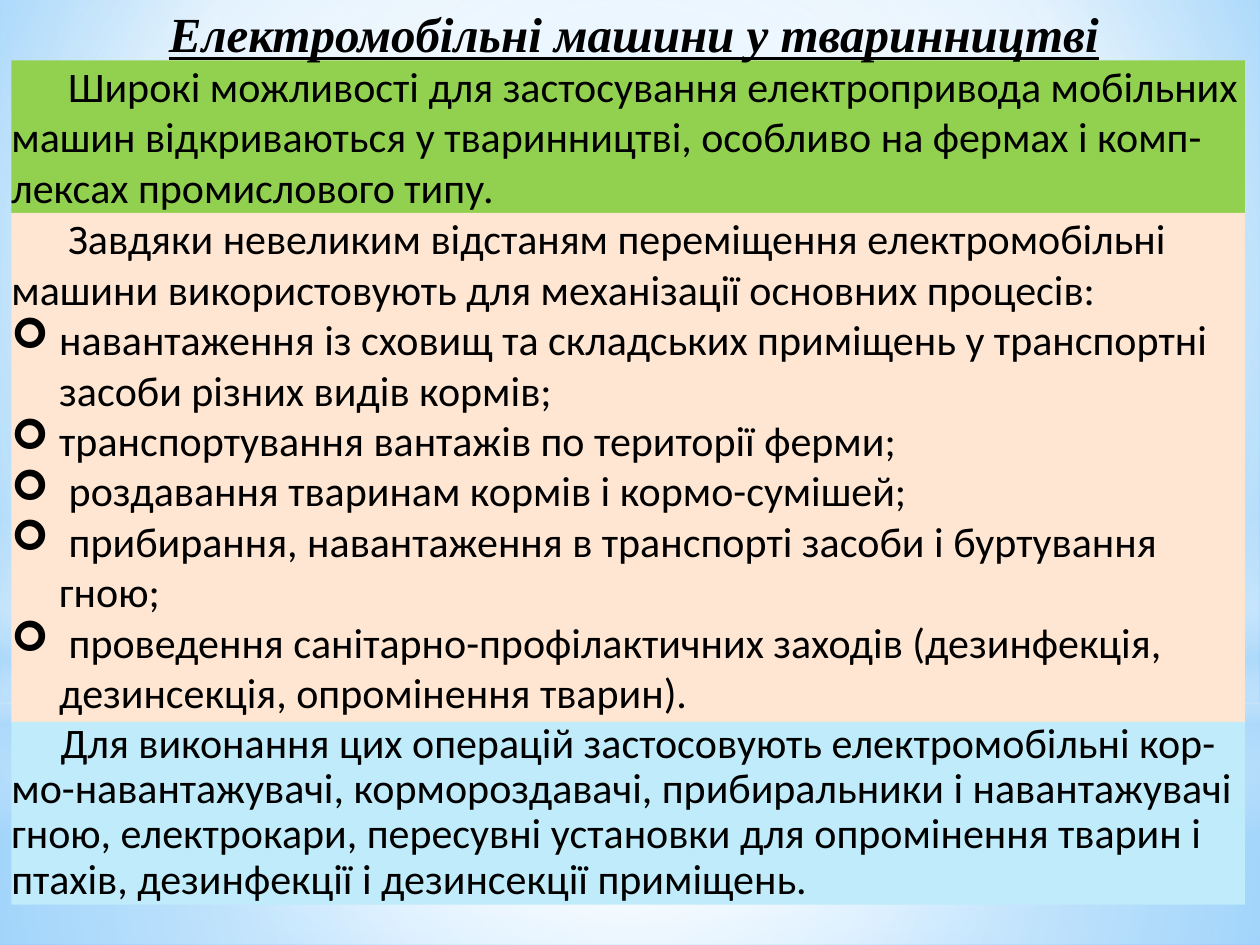
from lxml.etree import SubElement
from pptx import Presentation
from pptx.dml.color import RGBColor
from pptx.enum.shapes import MSO_SHAPE as Shape
from pptx.enum.text import MSO_ANCHOR as Anchor, MSO_AUTO_SIZE as AutoSize, PP_ALIGN as Align
from pptx.oxml.ns import qn
from pptx.util import Inches, Pt

BLACK = RGBColor(0x00, 0x00, 0x00)
WHITE = RGBColor(0xFF, 0xFF, 0xFF)
GREEN = RGBColor(0x92, 0xD0, 0x50)
PEACH = RGBColor(0xFF, 0xE6, 0xD3)
AQUA = RGBColor(0xBF, 0xEB, 0xFA)
PALE_BLUE = RGBColor(0xB4, 0xDC, 0xFA)
SKY = RGBColor(0x9E, 0xD5, 0xFF)
DEEP_SKY = RGBColor(0x5B, 0xB9, 0xFF)

CENTRE = (50, 50, 50, 50)
PANEL_LEFT, PANEL_WIDTH = 0.09, 9.79
BULLET_INDENT = 0.38

TITLE = "Електромобільні машини у тваринництві"
INTRO = ("Широкі можливості для застосування електропривода мобільних машин "
         "відкриваються у тваринництві, особливо на фермах і комп-лексах промислового типу.")
LEAD = ("Завдяки невеликим відстаням переміщення електромобільні машини "
        "використовують для механізації основних процесів:")
PROCESSES = [
    "навантаження із сховищ та складських приміщень у транспортні засоби різних видів кормів;",
    "транспортування вантажів по території ферми;",
    " роздавання тваринам кормів і кормо-сумішей;",
    " прибирання, навантаження в транспорті засоби і буртування гною;",
    " проведення санітарно-профілактичних заходів (дезинфекція, дезинсекція, опромінення тварин).",
]
SUMMARY = ("Для виконання цих операцій застосовують електромобільні кор-мо-навантажувачі, "
           "кормороздавачі, прибиральники і навантажувачі гною, електрокари, пересувні "
           "установки для опромінення тварин і птахів, дезинфекції і дезинсекції приміщень.")


def set_gradient(properties, stops, focus=None):
    """Replace a solid fill by (position, colour, opacity) stops, vertical unless focus is given."""
    solid = properties.find(qn("a:solidFill"))
    gradient = solid.makeelement(qn("a:gradFill"), {"rotWithShape": "1"})
    properties.replace(solid, gradient)
    stop_list = SubElement(gradient, qn("a:gsLst"))
    for position, colour, opacity in stops:
        stop = SubElement(stop_list, qn("a:gs"), pos=str(position * 1000))
        colour_element = SubElement(stop, qn("a:srgbClr"), val=str(colour))
        if opacity < 100:
            SubElement(colour_element, qn("a:alpha"), val=str(opacity * 1000))
    if focus:
        circle = SubElement(gradient, qn("a:path"), path="circle")
        edges = {side: str(value * 1000) for side, value in zip("ltrb", focus)}
        SubElement(circle, qn("a:fillToRect"), edges)
    else:
        SubElement(gradient, qn("a:lin"), ang=str(90 * 60000), scaled="0")


def add_filled_shape(slide, kind, left, top, width, height, colour):
    shape = slide.shapes.add_shape(kind, Inches(left), Inches(top), Inches(width), Inches(height))
    shape.shadow.inherit = False
    shape.fill.solid()
    shape.fill.fore_color.rgb = colour
    shape.line.fill.background()
    return shape


def add_glow(slide, kind, top, height, stops, focus=None):
    shape = add_filled_shape(slide, kind, 0, top, 10, height, WHITE)
    set_gradient(shape.element.spPr, stops, focus)


def add_backdrop(slide):
    slide.background.fill.solid()
    set_gradient(next(slide.element.iter(qn("p:bgPr"))),
                 [(0, SKY, 100), (60, WHITE, 100), (100, DEEP_SKY, 100)], (20, 10, 20, 60))
    add_glow(slide, Shape.RECTANGLE, 5.58, 1.92,
             [(0, WHITE, 91), (37, WHITE, 76), (100, PALE_BLUE, 79)], CENTRE)
    add_glow(slide, Shape.RECTANGLE, 0, 5.58,
             [(0, WHITE, 89), (48, WHITE, 62), (100, PALE_BLUE, 79)], CENTRE)
    add_glow(slide, Shape.RECTANGLE, 4.12, 2.5,
             [(0, WHITE, 0), (29, WHITE, 30), (45, PALE_BLUE, 40),
              (55, WHITE, 26), (65, PALE_BLUE, 60), (100, WHITE, 0)])
    add_glow(slide, Shape.OVAL, 1.75, 5.58, [(0, WHITE, 100), (56, WHITE, 0)], CENTRE)


def place(shape, left, top, width, height):
    """Move a placeholder and bring it to the front."""
    shape.left, shape.top = Inches(left), Inches(top)
    shape.width, shape.height = Inches(width), Inches(height)
    shape.element.getparent().append(shape.element)


def prepare_frame(shape, wrap=True):
    frame = shape.text_frame
    frame.margin_left = frame.margin_top = frame.margin_right = frame.margin_bottom = 0
    frame.word_wrap = wrap
    frame.auto_size = AutoSize.NONE
    frame.vertical_anchor = Anchor.TOP
    return frame


def format_font(paragraph, name, size):
    for run in paragraph.runs:
        run.font.name = name
        run.font.size = Pt(size)
        run.font.color.rgb = BLACK


def write_paragraph(paragraph, text, first_line=0.45, bullet=None, spacing=1.0):
    paragraph.text = text
    paragraph.alignment = Align.LEFT
    paragraph.line_spacing = spacing
    paragraph.space_before = paragraph.space_after = Pt(0)
    properties = paragraph._p.get_or_add_pPr()
    margin, indent = (BULLET_INDENT, -BULLET_INDENT) if bullet else (0, first_line)
    properties.set("marL", str(Inches(margin)))
    properties.set("indent", str(Inches(indent)))
    if bullet:
        SubElement(properties, qn("a:buFont"), typeface="Wingdings")
        SubElement(properties, qn("a:buChar"), char=bullet)
    else:
        SubElement(properties, qn("a:buNone"))
    format_font(paragraph, "Calibri", 24)


def add_panel(slide, top, height, colour, text, **layout):
    panel = add_filled_shape(slide, Shape.RECTANGLE, PANEL_LEFT, top, PANEL_WIDTH, height, colour)
    write_paragraph(prepare_frame(panel).paragraphs[0], text, **layout)


def fill_process_list(body):
    place(body, PANEL_LEFT, 1.69, PANEL_WIDTH, 4.04)
    body.fill.solid()
    body.fill.fore_color.rgb = PEACH
    frame = prepare_frame(body)
    write_paragraph(frame.paragraphs[0], LEAD)
    for process in PROCESSES:
        write_paragraph(frame.add_paragraph(), process, bullet="➢")


def fill_title(title):
    place(title, 1.3, 0.03, 7.46, 0.47)
    paragraph = prepare_frame(title, wrap=False).paragraphs[0]
    paragraph.text = TITLE
    paragraph.alignment = Align.CENTER
    format_font(paragraph, "Times New Roman", 28)
    font = paragraph.runs[0].font
    font.bold = font.italic = font.underline = True


def main():
    presentation = Presentation()
    presentation.slide_width, presentation.slide_height = Inches(10), Inches(7.5)
    slide = presentation.slides.add_slide(presentation.slide_layouts[1])
    add_backdrop(slide)
    add_panel(slide, 0.48, 1.21, GREEN, INTRO)
    fill_process_list(slide.placeholders[1])
    add_panel(slide, 5.73, 1.45, AQUA, SUMMARY, first_line=0.39, spacing=0.9)
    fill_title(slide.shapes.title)
    presentation.save("out.pptx")


if __name__ == "__main__":
    main()
